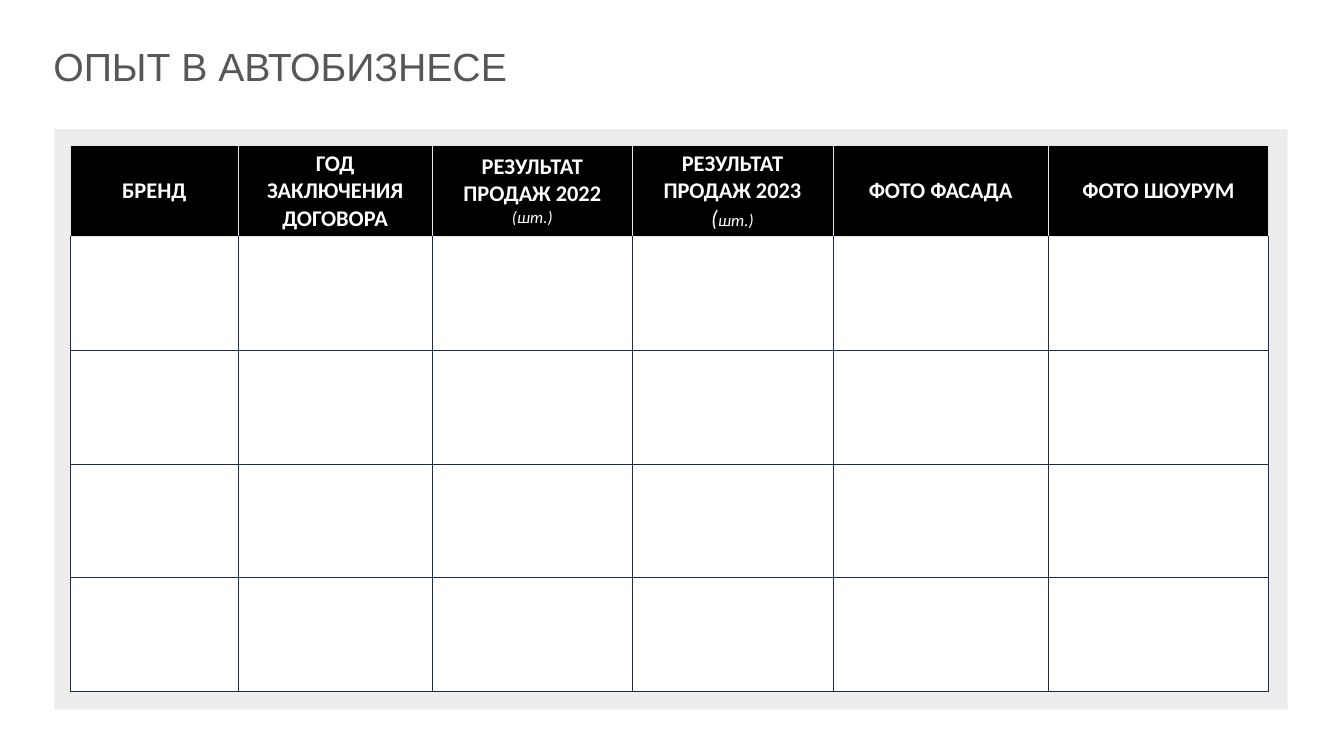
from dataclasses import dataclass

import pptx
import pptx.dml.color
import pptx.enum.shapes
import pptx.enum.text
import pptx.oxml
import pptx.oxml.ns
import pptx.slide
import pptx.table
import pptx.util

RGBColor = pptx.dml.color.RGBColor
PANEL_GREY = RGBColor(0xED, 0xED, 0xED)
TITLE_GREY = RGBColor(0x57, 0x57, 0x56)
BLACK = RGBColor(0, 0, 0)
WHITE = RGBColor(0xFF, 0xFF, 0xFF)
HEADER_LINE = RGBColor(0xE7, 0xE6, 0xE6)
BODY_LINE = RGBColor(0x1B, 0x29, 0x54)

SLIDE_WIDTH = pptx.util.Inches(13.33)
SLIDE_HEIGHT = pptx.util.Inches(7.5)
BORDER_WIDTH = pptx.util.Pt(0.25)
EMPTY_ROWS = 4
HEADER_ROW_WEIGHT = 89
EMPTY_ROW_WEIGHT = 113


@dataclass(frozen=True)
class Area:
    """A rectangle in percent of the slide's width and height."""
    left: float
    top: float
    width: float
    height: float

    def lengths(self) -> tuple[int, int, int, int]:
        return (
            round(SLIDE_WIDTH * self.left / 100),
            round(SLIDE_HEIGHT * self.top / 100),
            round(SLIDE_WIDTH * self.width / 100),
            round(SLIDE_HEIGHT * self.height / 100),
        )


@dataclass(frozen=True)
class Note:
    text: str
    size: int


@dataclass(frozen=True)
class Column:
    heading: str
    weight: int
    notes: tuple[Note, ...] = ()


TITLE_AREA = Area(3.23, 5.6, 38.41, 5.6)
PANEL_AREA = Area(4.05, 17.07, 91.75, 76.8)
TABLE_AREA = Area(5.25, 19.2, 89.12, 72.13)

COLUMNS = (
    Column("БРЕНД", 166),
    Column("ГОД ЗАКЛЮЧЕНИЯ ДОГОВОРА", 193),
    Column("РЕЗУЛЬТАТ ПРОДАЖ 2022 ", 198, (Note("(шт.)", 12),)),
    Column("РЕЗУЛЬТАТ ПРОДАЖ 2023 ", 199, (Note("(", 16), Note("шт.)", 12))),
    Column("ФОТО ФАСАДА", 214),
    Column("ФОТО ШОУРУМ", 218),
)


def add_panel(slide: pptx.slide.Slide) -> None:
    panel = slide.shapes.add_shape(
        pptx.enum.shapes.MSO_SHAPE.RECTANGLE, *PANEL_AREA.lengths())
    panel.shadow.inherit = False
    panel.fill.solid()
    panel.fill.fore_color.rgb = PANEL_GREY
    panel.line.fill.background()


def add_title(slide: pptx.slide.Slide) -> None:
    frame = slide.shapes.add_textbox(*TITLE_AREA.lengths()).text_frame
    frame.word_wrap = True
    paragraph = frame.paragraphs[0]
    paragraph.text = "ОПЫТ В АВТОБИЗНЕСЕ"
    paragraph.line_spacing = 0.9
    paragraph.font.name = "Arial"
    paragraph.font.size = pptx.util.Pt(28)
    paragraph.font.color.rgb = TITLE_GREY


def style_cell(cell: pptx.table._Cell, fill: RGBColor, line: RGBColor,
               top_line: RGBColor) -> None:
    cell.fill.solid()
    cell.fill.fore_color.rgb = fill
    properties = cell._tc.get_or_add_tcPr()
    borders = {"lnL": line, "lnR": line, "lnT": top_line, "lnB": line}
    for position, (tag, color) in enumerate(borders.items()):
        border = pptx.oxml.parse_xml(
            f'<a:{tag} {pptx.oxml.ns.nsdecls("a")} w="{BORDER_WIDTH}">'
            f'<a:solidFill><a:srgbClr val="{color}"/></a:solidFill></a:{tag}>')
        properties.insert(position, border)


def write_heading(cell: pptx.table._Cell, column: Column) -> None:
    cell.vertical_anchor = pptx.enum.text.MSO_ANCHOR.MIDDLE
    paragraph = cell.text_frame.paragraphs[0]
    paragraph.alignment = pptx.enum.text.PP_ALIGN.CENTER
    paragraph.font.name = "Calibri"
    paragraph.font.color.rgb = WHITE
    heading = paragraph.add_run()
    heading.text = column.heading
    heading.font.size = pptx.util.Pt(16)
    heading.font.bold = True
    for note in column.notes:
        run = paragraph.add_run()
        run.text = note.text
        run.font.size = pptx.util.Pt(note.size)
        run.font.bold = False
        run.font.italic = True


def add_sales_table(slide: pptx.slide.Slide) -> None:
    left, top, width, height = TABLE_AREA.lengths()
    table = slide.shapes.add_table(
        EMPTY_ROWS + 1, len(COLUMNS), left, top, width, height).table
    total_width = sum(column.weight for column in COLUMNS)
    row_weights = [HEADER_ROW_WEIGHT] + [EMPTY_ROW_WEIGHT] * EMPTY_ROWS

    for row, weight in zip(table.rows, row_weights):
        row.height = round(height * weight / sum(row_weights))
    for index, column in enumerate(COLUMNS):
        table.columns[index].width = round(width * column.weight / total_width)
        header = table.cell(0, index)
        style_cell(header, BLACK, HEADER_LINE, HEADER_LINE)
        write_heading(header, column)
        for row_index in range(1, EMPTY_ROWS + 1):
            top_line = HEADER_LINE if row_index == 1 else BODY_LINE
            style_cell(table.cell(row_index, index), WHITE, BODY_LINE, top_line)


def main() -> None:
    presentation = pptx.Presentation()
    presentation.slide_width = SLIDE_WIDTH
    presentation.slide_height = SLIDE_HEIGHT
    slide = presentation.slides.add_slide(presentation.slide_layouts[6])
    add_panel(slide)
    add_title(slide)
    add_sales_table(slide)
    presentation.save("out.pptx")


if __name__ == "__main__":
    main()
